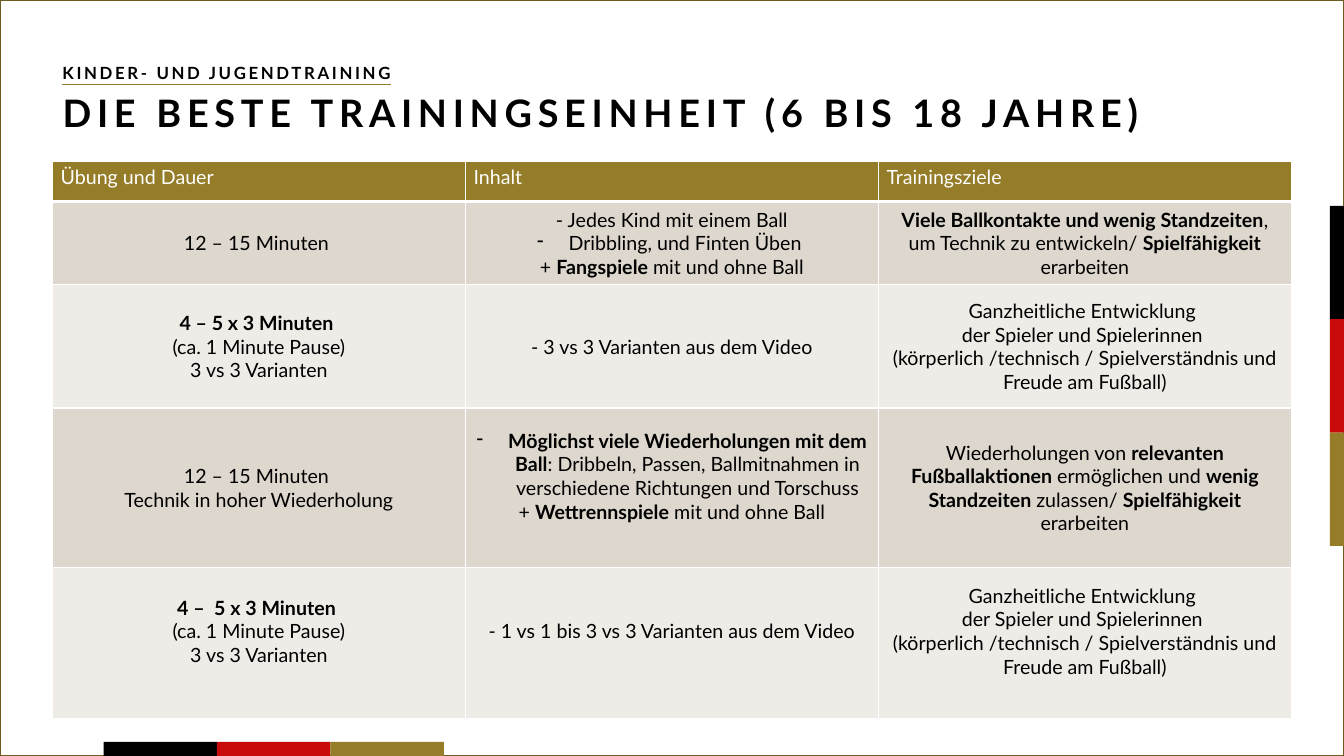
from dataclasses import dataclass

from pptx import Presentation
from pptx.dml.color import RGBColor
from pptx.enum.shapes import MSO_SHAPE
from pptx.enum.text import MSO_ANCHOR, MSO_AUTO_SIZE, PP_ALIGN
from pptx.oxml import parse_xml
from pptx.oxml.ns import nsdecls, qn
from pptx.util import Pt

RECTANGLE = MSO_SHAPE.RECTANGLE
TOP, MIDDLE = MSO_ANCHOR.TOP, MSO_ANCHOR.MIDDLE
LEFT, CENTER = PP_ALIGN.LEFT, PP_ALIGN.CENTER
NO_AUTOFIT = MSO_AUTO_SIZE.NONE

KICKER = "KINDER- UND JUGENDTRAINING"
TITLE = "DIE BESTE TRAININGSEINHEIT (6 BIS 18 JAHRE)"
HEADINGS = ["Übung und Dauer", "Inhalt", "Trainingsziele"]
BOLD_MARK = "*"
BULLET_MARK = "•"
DEVELOPMENT_GOALS = [
    "Ganzheitliche Entwicklung ",
    "der Spieler und Spielerinnen ",
    "(körperlich /technisch / Spielverständnis und Freude am Fußball)",
]
UNITS = [
    [
        ["12 – 15 Minuten "],
        ["- Jedes Kind mit einem Ball", "•Dribbling, und Finten Üben ",
         "+ *Fangspiele *mit und ohne Ball"],
        ["*Viele Ballkontakte und wenig Standzeiten*, um Technik zu entwickeln/ "
         "*Spielfähigkeit *erarbeiten"],
    ],
    [
        ["*4 – 5 x 3 Minuten *", "(ca. 1 Minute Pause)", "3 vs 3 Varianten"],
        ["- 3 vs 3 Varianten aus dem Video"],
        DEVELOPMENT_GOALS,
    ],
    [
        ["12 – 15 Minuten ", "Technik in hoher Wiederholung"],
        ["•*Möglichst viele Wiederholungen mit dem Ball*: Dribbeln, Passen, "
         "Ballmitnahmen in verschiedene Richtungen und Torschuss",
         "+ *Wettrennspiele* mit und ohne Ball"],
        ["Wiederholungen von *relevanten Fußballaktionen *ermöglichen und "
         "*wenig Standzeiten *zulassen/ *Spielfähigkeit *erarbeiten"],
    ],
    [
        ["*4 –  5 x 3 Minuten *", "(ca. 1 Minute Pause)", "3 vs 3 Varianten"],
        ["- 1 vs 1 bis 3 vs 3 Varianten aus dem Video"],
        DEVELOPMENT_GOALS,
    ],
]
RAISED_CELLS = {(3, 1), (4, 0), (4, 1), (4, 2)}


@dataclass(frozen=True)
class Theme:
    font: str = "Lato"
    black: str = "000000"
    red: str = "C80A0A"
    gold: str = "957C28"
    frame: str = "6E5C1E"
    white: str = "FFFFFF"
    bands: tuple = ("DDD7CD", "EFECE8")
    title_size: int = 27
    kicker_size: int = 12
    table_size: int = 14


THEME = Theme()
PAGE_WIDTH, PAGE_HEIGHT = 960, 540
CONTENT_LEFT = 37.5
COLUMN_WIDTH = 295
TABLE_TOP = 115
ROW_HEIGHTS = [29, 59.5, 88, 114, 107.5]
CELL_MARGIN = 2.9
RAISED_MARGIN = 19.7
BULLET_INDENT = 22.5
STRIPE_LENGTH, STRIPE_DEPTH = 81, 10
SIDE_STRIPES_TOP, BOTTOM_STRIPES_LEFT = 147, 74


def add_span(para, text, size, color, bold=False, spacing=0):
    span = para.add_run()
    span.text = text
    span.font.name = THEME.font
    span.font.size = Pt(size)
    span.font.bold = bold
    span.font.color.rgb = RGBColor.from_string(color)
    if spacing:
        span.font._element.set("spc", str(round(spacing * 100)))
    return span


def add_box(page, left, top, width, height, fill, line=None):
    box = page.shapes.add_shape(RECTANGLE, Pt(left), Pt(top), Pt(width), Pt(height))
    box.shadow.inherit = False
    box.fill.solid()
    box.fill.fore_color.rgb = RGBColor.from_string(fill)
    if line:
        box.line.color.rgb = RGBColor.from_string(line)
        box.line.width = Pt(1)
    else:
        box.line.fill.background()


def add_stripes(page):
    for index, color in enumerate((THEME.black, THEME.red, THEME.gold)):
        offset = index * STRIPE_LENGTH
        add_box(page, PAGE_WIDTH - STRIPE_DEPTH, SIDE_STRIPES_TOP + offset,
                STRIPE_DEPTH, STRIPE_LENGTH, color)
        add_box(page, BOTTOM_STRIPES_LEFT + offset, PAGE_HEIGHT - STRIPE_DEPTH,
                STRIPE_LENGTH, STRIPE_DEPTH, color)


def fill_heading(box, top, width, height, anchor, text, size, spacing):
    box.left, box.top, box.width, box.height = Pt(CONTENT_LEFT), Pt(top), Pt(width), Pt(height)
    frame = box.text_frame
    frame.word_wrap = True
    frame.auto_size = NO_AUTOFIT
    frame.vertical_anchor = anchor
    para = frame.paragraphs[0]
    para.alignment = LEFT
    para.line_spacing = 0.9
    return add_span(para, text, size, THEME.black, True, spacing)


def add_headings(page):
    fill_heading(page.shapes.title, 65.5, 3 * COLUMN_WIDTH, 34, MIDDLE,
                 TITLE, THEME.title_size, 4.1)
    kicker = page.shapes.add_textbox(0, 0, 0, 0)
    span = fill_heading(kicker, 43, 658, 22.5, TOP, KICKER, THEME.kicker_size, 1.9)
    span.font.underline = True
    underline = parse_xml(
        f'<a:uFill {nsdecls("a")}><a:solidFill><a:srgbClr val="{THEME.gold}"/>'
        "</a:solidFill></a:uFill>")
    span.font._element.find(qn("a:latin")).addprevious(underline)


def style_cell(cell, fill, bottom_border):
    properties = cell._tc.get_or_add_tcPr()
    for side, width in (("L", 1), ("R", 1), ("T", 1), ("B", bottom_border)):
        properties.append(parse_xml(
            f'<a:ln{side} {nsdecls("a")} w="{Pt(width)}"><a:solidFill>'
            f'<a:srgbClr val="{THEME.white}"/></a:solidFill></a:ln{side}>'))
    cell.fill.solid()
    cell.fill.fore_color.rgb = RGBColor.from_string(fill)
    cell.margin_left = cell.margin_right = Pt(2 * CELL_MARGIN)
    cell.margin_top = cell.margin_bottom = Pt(CELL_MARGIN)


def write_cell(cell, lines, color, alignment):
    frame = cell.text_frame
    for index, line in enumerate(lines):
        para = frame.add_paragraph() if index else frame.paragraphs[0]
        para.alignment = alignment
        if line.startswith(BULLET_MARK):
            properties = para._p.get_or_add_pPr()
            properties.set("marL", str(Pt(BULLET_INDENT)))
            properties.set("indent", str(-Pt(BULLET_INDENT)))
            properties.append(parse_xml(f'<a:buChar {nsdecls("a")} char="-"/>'))
        pieces = line.removeprefix(BULLET_MARK).split(BOLD_MARK)
        for position, piece in enumerate(pieces):
            if piece:
                add_span(para, piece, THEME.table_size, color, position % 2 == 1)


def add_training_table(page):
    rows = [[[heading] for heading in HEADINGS]] + UNITS
    table = page.shapes.add_table(
        len(rows), len(HEADINGS), Pt(CONTENT_LEFT), Pt(TABLE_TOP),
        Pt(COLUMN_WIDTH * len(HEADINGS)), Pt(sum(ROW_HEIGHTS))).table
    table.horz_banding = False
    for column in table.columns:
        column.width = Pt(COLUMN_WIDTH)
    for row_index, row in enumerate(rows):
        table.rows[row_index].height = Pt(ROW_HEIGHTS[row_index])
        for column_index, lines in enumerate(row):
            cell = table.cell(row_index, column_index)
            if row_index == 0:
                style_cell(cell, THEME.gold, 3)
                write_cell(cell, lines, THEME.white, LEFT)
                continue
            style_cell(cell, THEME.bands[(row_index - 1) % 2], 1)
            cell.vertical_anchor = MIDDLE
            if (row_index, column_index) in RAISED_CELLS:
                cell.margin_bottom = Pt(RAISED_MARGIN)
            write_cell(cell, lines, THEME.black, CENTER)


def main():
    deck = Presentation()
    deck.slide_width, deck.slide_height = Pt(PAGE_WIDTH), Pt(PAGE_HEIGHT)
    page = deck.slides.add_slide(deck.slide_layouts[5])
    add_box(page, 0, 0, PAGE_WIDTH, PAGE_HEIGHT, THEME.white, THEME.frame)
    add_stripes(page)
    add_headings(page)
    page.shapes._spTree.append(page.shapes.title._element)
    add_training_table(page)
    deck.save("out.pptx")


if __name__ == "__main__":
    main()
